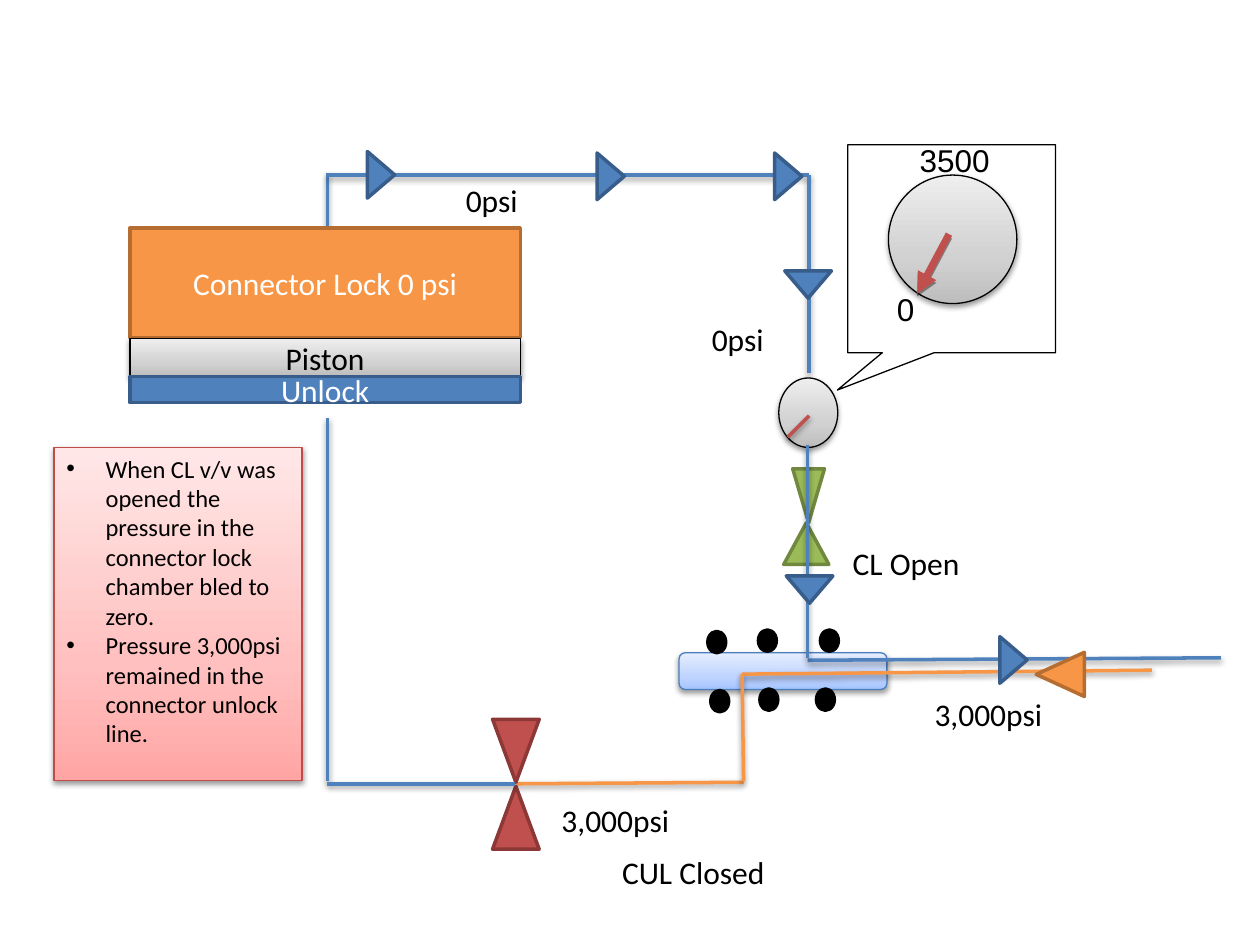
from dataclasses import dataclass
from typing import Any

from pptx import Presentation, oxml
from pptx import util as u
from pptx.dml import color
from pptx.enum import shapes, text
from pptx.oxml import ns

BLUE, ORANGE, RED, GREEN, BLACK, WHITE = (
    "4F81BD", "F79646", "C0504D", "9BBB59", "000000", "FFFFFF")
BLUE_EDGE, ORANGE_EDGE, RED_EDGE, GREEN_EDGE = "385D8A", "B66D31", "8C3836", "71893F"
# Gradients run from bottom to top, with the middle stop at 35 %
STEEL = ("BDBDBD", "D1D1D1", "EEEEEE")
ICE = ("A4C4FF", "BFD4FF", "E6EEFF")
ROSE = ("FFA6A5", "FFC0BF", "FFE7E7")
Fill = str | tuple[str, str, str] | None

Shape = shapes.MSO_SHAPE
MIDDLE = {"vertical_anchor": text.MSO_ANCHOR.MIDDLE, "word_wrap": True}
TOP = {"vertical_anchor": text.MSO_ANCHOR.TOP, "word_wrap": True}
GROWING = {"auto_size": text.MSO_AUTO_SIZE.SHAPE_TO_FIT_TEXT}


@dataclass
class Box:
    """Place and size in centimetres, turn in degrees."""
    left: float
    top: float
    width: float
    height: float
    turn: int = 0

    def lengths(self) -> list[int]:
        return [u.Cm(v) for v in (self.left, self.top, self.width, self.height)]


@dataclass
class Pipe:
    """Line from (x1, y1) to (x2, y2) in centimetres."""
    x1: float
    y1: float
    x2: float
    y2: float
    colour: str = BLUE
    weight: float = 2


@dataclass
class Label:
    words: str
    left: float
    top: float
    width: float = 4.62
    font: str = "Calibri"
    wrap: bool = True


def rgb(colour: str) -> color.RGBColor:
    return color.RGBColor.from_string(colour)


def xml(tag: str, attributes: str = "", inner: str = "") -> Any:
    return oxml.parse_xml(f'<a:{tag} {ns.nsdecls("a")} {attributes}>{inner}</a:{tag}>')


def cast_shadow(properties: Any, blur: int = 40000) -> None:
    for old in properties.findall(ns.qn("a:effectLst")):
        properties.remove(old)
    properties.append(xml("effectLst", "", (
        f'<a:outerShdw blurRad="{blur}" dist="20000" dir="5400000" rotWithShape="0">'
        '<a:srgbClr val="000000"><a:alpha val="38000"/></a:srgbClr></a:outerShdw>')))


def paint(shape: Any, fill: Fill) -> None:
    if fill is None:
        shape.fill.background()
    elif isinstance(fill, str):
        shape.fill.solid()
        shape.fill.fore_color.rgb = rgb(fill)
    else:
        shape.fill.gradient()
        shape.fill.gradient_angle = 90
        stops = "".join(f'<a:gs pos="{pos}"><a:srgbClr val="{stop}"/></a:gs>'
                        for pos, stop in zip((0, 35000, 100000), fill))
        gradient = shape._element.spPr.find(ns.qn("a:gradFill"))
        gradient.replace(gradient.find(ns.qn("a:gsLst")), xml("gsLst", "", stops))


def draw_shape(slide: Any, kind: Shape, box: Box, fill: Fill, edge: str,
               weight: float = 2, shadow: bool = False) -> Any:
    shape = slide.shapes.add_shape(kind, *box.lengths())
    shape.rotation = box.turn
    shape.shadow.inherit = False
    paint(shape, fill)
    shape.line.color.rgb = rgb(edge)
    shape.line.width = u.Pt(weight)
    if shadow:
        cast_shadow(shape._element.spPr)
    return shape


def draw_pipe(slide: Any, pipe: Pipe, arrow: bool = False) -> None:
    ends = [u.Cm(v) for v in (pipe.x1, pipe.y1, pipe.x2, pipe.y2)]
    line = slide.shapes.add_connector(shapes.MSO_CONNECTOR.STRAIGHT, *ends)
    line.line.color.rgb = rgb(pipe.colour)
    line.line.width = u.Pt(pipe.weight)
    properties = line._element.spPr
    if arrow:
        properties.find(ns.qn("a:ln")).append(xml("tailEnd", 'type="triangle"'))
    cast_shadow(properties, 0 if arrow else 40000)


def write(shape: Any, lines: list[str], frame_format: dict[str, Any], colour: str = BLACK,
          size: int = 18, font: str = "Calibri", align: Any = text.PP_ALIGN.LEFT) -> None:
    frame = shape.text_frame
    for name, value in frame_format.items():
        setattr(frame, name, value)
    frame.text = "\n".join(lines)
    for paragraph in frame.paragraphs:
        paragraph.alignment = align
        for name, value in {"name": font, "size": u.Pt(size)}.items():
            setattr(paragraph.font, name, value)
        paragraph.font.color.rgb = rgb(colour)


def add_bullets(shape: Any) -> None:
    for paragraph in shape.text_frame.paragraphs:
        properties = paragraph._p.get_or_add_pPr()
        indent = u.Cm(0.79)
        properties.set("marL", str(indent))
        properties.set("indent", str(-indent))
        properties.insert(0, xml("buFont", 'typeface="Arial"'))
        properties.insert(1, xml("buChar", 'char="•"'))


def draw_label(slide: Any, label: Label) -> None:
    box = Box(label.left, label.top, label.width, 1.02)
    write(slide.shapes.add_textbox(*box.lengths()), [label.words],
          GROWING | {"word_wrap": label.wrap}, font=label.font)


LOCK_PIPES = [Pipe(6.6, 5.08, 6.6, 3.48), Pipe(6.6, 3.53, 16.31, 3.53),
              Pipe(16.31, 3.53, 16.31, 7.52)]
UNLOCK_PIPES = [Pipe(6.6, 8.43, 6.6, 15.75), Pipe(10.41, 15.8, 14.99, 15.77, ORANGE)]
MANIFOLD_PIPES = [Pipe(23.22, 13.51, 14.96, 13.59, ORANGE), Pipe(24.61, 13.26, 16.28, 13.31),
                  Pipe(14.96, 13.59, 14.99, 15.75, ORANGE), Pipe(16.28, 8.97, 16.28, 13.26),
                  Pipe(6.6, 15.8, 10.39, 15.8)]
VALVES = [(Box(15.8, 10.54, 0.91, 0.84), GREEN, GREEN_EDGE),
          (Box(15.98, 9.45, 0.64, 1.09, 180), GREEN, GREEN_EDGE),
          (Box(9.93, 15.85, 0.94, 1.27), RED, RED_EDGE),
          (Box(9.93, 14.5, 0.94, 1.27, 180), RED, RED_EDGE)]
PORTS = [(14.27, 12.73), (15.29, 12.7), (16.54, 12.7),
         (14.33, 13.92), (15.32, 13.89), (16.46, 13.89)]
FLOW = [(7.21, 3.25, 90), (11.84, 3.28, 90), (15.42, 3.28, 90),
        (15.82, 5.46, 180), (15.85, 11.61, 180), (19.96, 13.03, 90)]
LABELS = [Label("CUL Closed", 12.29, 17.07), Label("CL Open", 16.94, 10.85),
          Label("0psi", 14.1, 6.32), Label("3,000psi", 18.59, 13.89),
          Label("0psi", 9.14, 3.53), Label("3,000psi", 11.07, 16.03)]
DIAL_LABELS = [Label("0", 17.83, 5.72, 0.86, "Arial", False),
               Label("3500", 18.29, 2.72, 1.93, "Arial", False)]
NOTES = ["When CL v/v was opened the pressure in the connector lock chamber bled to zero.",
         "Pressure 3,000psi remained in the connector unlock line."]


def draw_circuit(slide: Any) -> None:
    for pipe in LOCK_PIPES:
        draw_pipe(slide, pipe)
    draw_shape(slide, Shape.OVAL, Box(15.7, 7.62, 1.19, 1.4), STEEL, BLACK, 0.75, True)
    for pipe in UNLOCK_PIPES:
        draw_pipe(slide, pipe)
    for box, fill, edge in VALVES:
        draw_shape(slide, Shape.ISOSCELES_TRIANGLE, box, fill, edge)
    draw_pipe(slide, Pipe(16.31, 8.38, 15.88, 8.81, RED))
    draw_shape(slide, Shape.ROUNDED_RECTANGLE, Box(13.69, 13.16, 4.19, 0.74),
               ICE, "4B7EBC", 0.75, True)
    for left, top in PORTS:
        draw_shape(slide, Shape.OVAL, Box(left, top, 0.36, 0.43), BLACK, BLACK)
    for pipe in MANIFOLD_PIPES:
        draw_pipe(slide, pipe)
    for left, top, turn in FLOW:
        draw_shape(slide, Shape.ISOSCELES_TRIANGLE, Box(left, top, 0.94, 0.55, turn),
                   BLUE, BLUE_EDGE)
    draw_shape(slide, Shape.ISOSCELES_TRIANGLE, Box(20.93, 13.11, 0.89, 0.97, 270),
               ORANGE, ORANGE_EDGE)


def draw_connector_body(slide: Any) -> None:
    for words, top, height, fill, edge, weight, colour in (
            ("Connector Lock 0 psi", 4.6, 2.21, ORANGE, ORANGE_EDGE, 2, WHITE),
            ("Piston", 6.83, 0.76, STEEL, BLACK, 0.75, BLACK),
            ("Unlock", 7.59, 0.53, BLUE, BLUE_EDGE, 2, WHITE)):
        chamber = draw_shape(slide, Shape.RECTANGLE, Box(2.62, top, 7.87, height),
                             fill, edge, weight, fill == STEEL)
        write(chamber, [words], MIDDLE, colour, align=text.PP_ALIGN.CENTER)


def draw_dial(slide: Any) -> None:
    callout = draw_shape(slide, Shape.RECTANGULAR_CALLOUT, Box(17.09, 2.92, 4.19, 4.19),
                         None, BLACK, 0.75)
    callout.adjustments[0], callout.adjustments[1] = -0.55, 0.68
    draw_shape(slide, Shape.OVAL, Box(17.91, 3.53, 2.59, 2.59), STEEL, BLACK, 0.75, True)
    draw_pipe(slide, Pipe(19.13, 4.72, 18.49, 5.92, RED, 4), arrow=True)


def main() -> None:
    deck = Presentation()
    deck.slide_width, deck.slide_height = u.Cm(25.4), u.Cm(19.05)
    slide = deck.slides.add_slide(deck.slide_layouts[6])
    draw_circuit(slide)
    notes = draw_shape(slide, Shape.RECTANGLE, Box(1.09, 9.02, 5, 6.71),
                       ROSE, "BF4C48", 0.75, True)
    write(notes, NOTES, TOP, size=14)
    add_bullets(notes)
    draw_connector_body(slide)
    draw_dial(slide)
    for label in LABELS + DIAL_LABELS:
        draw_label(slide, label)
    deck.save("out.pptx")


if __name__ == "__main__":
    main()
